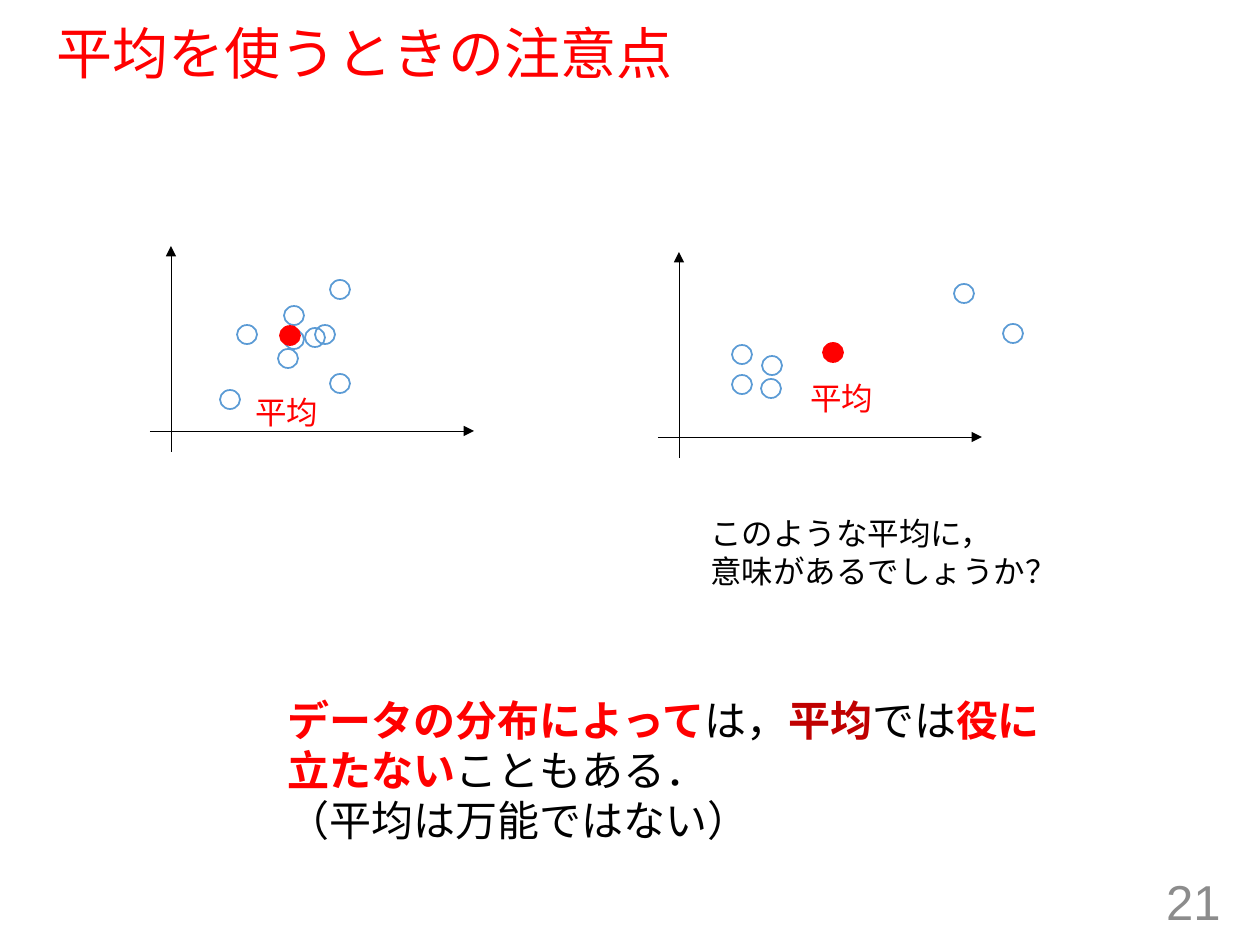
from lxml import etree
from pptx import Presentation
from pptx.dml.color import RGBColor
from pptx.enum.shapes import MSO_CONNECTOR, MSO_SHAPE
from pptx.enum.text import MSO_ANCHOR, MSO_AUTO_SIZE, PP_ALIGN
from pptx.oxml.ns import qn
from pptx.util import Emu, Pt

STRAIGHT = MSO_CONNECTOR.STRAIGHT
OVAL = MSO_SHAPE.OVAL
TOP, MIDDLE = MSO_ANCHOR.TOP, MSO_ANCHOR.MIDDLE
LEFT, RIGHT = PP_ALIGN.LEFT, PP_ALIGN.RIGHT
GROW, FIXED = MSO_AUTO_SIZE.SHAPE_TO_FIT_TEXT, MSO_AUTO_SIZE.NONE

PX_PER_INCH = 126
JAPANESE_FONT = "Noto Sans CJK JP"
RED, DARK_RED, BLUE = "FF0000", "C00000", "5B9BD5"
BLACK, GRAY = "000000", "8C8C8C"
DOT_WIDTH, DOT_HEIGHT = 20, 19


def px(length):
    return Emu(round(length * 914400 / PX_PER_INCH))


def color(value):
    return RGBColor.from_string(value)


class SlideBuilder:
    """Holds the text style and the current slide."""

    def __init__(self, page, font=JAPANESE_FONT, size=18):
        self.page = page
        self.font = font
        self.size = size

    def text(self, left, top, width, height, paragraphs, *, size=None, font=None,
             fill=BLACK, align=LEFT, anchor=TOP, wrap=True, fit=GROW, spacing=None):
        """Each paragraph is a string or a list of (text, color, bold)."""
        box = self.page.shapes.add_textbox(px(left), px(top), px(width), px(height))
        frame = box.text_frame
        frame.word_wrap = wrap
        frame.auto_size = fit
        frame.vertical_anchor = anchor
        for index, content in enumerate(paragraphs):
            para = frame.add_paragraph() if index else frame.paragraphs[0]
            para.alignment = align
            para.line_spacing = spacing
            spans = [(content, fill, False)] if isinstance(content, str) else content
            for words, span_color, bold in spans:
                span = para.add_run()
                span.text = words
                span.font.name = font or self.font
                span.font.size = Pt(size or self.size)
                span.font.bold = bold
                span.font.color.rgb = color(span_color)
                east_asian = etree.Element(qn("a:ea"), typeface=JAPANESE_FONT)
                span.font._element.find(qn("a:latin")).addnext(east_asian)

    def arrow(self, x1, y1, x2, y2):
        line = self.page.shapes.add_connector(STRAIGHT, px(x1), px(y1), px(x2), px(y2))
        line.line.color.rgb = color(BLACK)
        line.line.width = Pt(0.5)
        etree.SubElement(line.line._get_or_add_ln(), qn("a:tailEnd"), type="triangle")
        etree.SubElement(line._element.spPr, qn("a:effectLst"))

    def axes(self, x, y):
        """Draws a pair of axes crossing at the given origin."""
        self.arrow(x - 21, y, x + 303, y)
        self.arrow(x, y + 21, x, y - 185)

    def dot(self, left, top, outline=BLUE, fill=None):
        dot = self.page.shapes.add_shape(
            OVAL, px(left), px(top), px(DOT_WIDTH), px(DOT_HEIGHT))
        dot.shadow.inherit = False
        if fill:
            dot.fill.solid()
            dot.fill.fore_color.rgb = color(fill)
        else:
            dot.fill.background()
        dot.line.color.rgb = color(outline)
        dot.line.width = Pt(1)

    def scatter(self, origin, points, mean, label):
        self.axes(*origin)
        for point in points:
            self.dot(*point)
        self.dot(*mean, outline=RED, fill=RED)
        self.text(*label, 89, 50, ["平均"], fill=RED, wrap=False)


def main():
    deck = Presentation()
    deck.slide_width, deck.slide_height = px(1260), px(945)
    slide = SlideBuilder(deck.slides.add_slide(deck.slide_layouts[6]))

    # Title and page number
    slide.text(44, 24, 1166, 64, ["平均を使うときの注意点"], size=32, font="Arial",
               fill=RED, anchor=MIDDLE, fit=FIXED, spacing=0.9)
    slide.text(949, 876, 284, 50, ["21"], size=28, font="Arial", fill=GRAY,
               align=RIGHT, anchor=MIDDLE, fit=FIXED)

    # Clustered data, where the mean is typical
    slide.scatter(
        origin=(171, 431),
        points=[(284, 306), (305, 328), (315, 325), (278, 349), (284, 330),
                (237, 325), (330, 280), (330, 374), (220, 390)],
        mean=(280, 326), label=(243, 387))

    # Split data, where the mean lies away from every point
    slide.scatter(
        origin=(679, 437),
        points=[(761, 379), (954, 284), (762, 356), (732, 345), (1003, 324),
                (732, 375)],
        mean=(823, 343), label=(798, 373))
    slide.text(698, 508, 375, 89, ["このような平均に，", "意味があるでしょうか？"],
               font="Calibri", wrap=False)

    # Conclusion
    slide.text(275, 688, 789, 165, [
        [("データの分布によって", RED, True), ("は，", BLACK, False),
         ("平均", DARK_RED, True), ("では", BLACK, False),
         ("役に立たない", RED, True), ("こともある．", BLACK, False)],
        "（平均は万能ではない）",
    ], size=24)

    deck.save("out.pptx")


if __name__ == "__main__":
    main()
